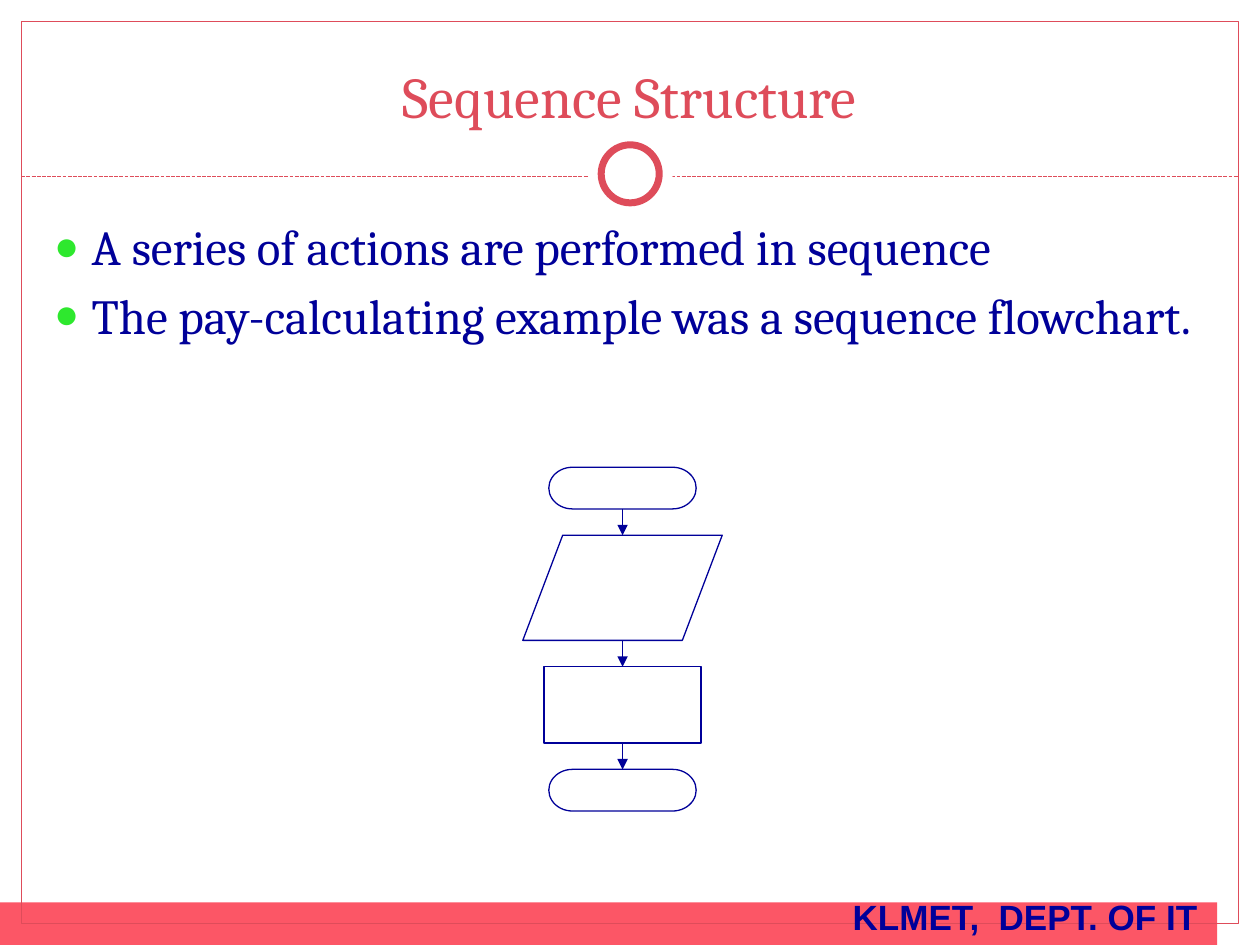
from lxml.etree import SubElement
from pptx import Presentation
from pptx.dml.color import RGBColor
from pptx.enum.dml import MSO_LINE as Dash
from pptx.enum.shapes import MSO_CONNECTOR as Link, MSO_SHAPE as Kind
from pptx.enum.text import MSO_ANCHOR as Anchor, PP_ALIGN as Align
from pptx.oxml.ns import qn
from pptx.util import Cm, Pt

ROSE, NAVY, GREEN, CORAL, WHITE = "DE4C5A", "000099", "2EE82E", "FC5666", "FFFFFF"


def paint(fmt, color):
    """Give a fill a solid colour, or none."""
    if color:
        fmt.solid()
        fmt.fore_color.rgb = RGBColor.from_string(color)
    else:
        fmt.background()


def add_box(slide, kind, left, top, width, height, fill=None, line=None, pts=0.75):
    box = slide.shapes.add_shape(kind, Cm(left), Cm(top), Cm(width), Cm(height))
    box.shadow.inherit = False
    paint(box.fill, fill)
    paint(box.line.fill, line)
    if line:
        box.line.width = Pt(pts)
    return box


def add_line(slide, x1, y1, x2, y2, color):
    line = slide.shapes.add_connector(Link.STRAIGHT, Cm(x1), Cm(y1), Cm(x2), Cm(y2))
    paint(line.line.fill, color)
    line.line.width = Pt(0.75)
    SubElement(line._element.spPr, qn("a:effectLst"))
    return line


def add_arrow(slide, x, y1, y2):
    line = add_line(slide, x, y1, x, y2, NAVY)
    SubElement(line.line._get_or_add_ln(), qn("a:tailEnd"), type="triangle")
    return line


def style(para, font, size, color, bold=False):
    para.font.name, para.font.size, para.font.bold = font, Pt(size), bold
    paint(para.font.fill, color)


def add_text(slide, left, top, width, height):
    frame = slide.shapes.add_textbox(Cm(left), Cm(top), Cm(width), Cm(height)).text_frame
    frame.word_wrap = True
    return frame


def add_bullet(para):
    props = para._p.get_or_add_pPr()
    props.set("marL", str(Cm(0.76)))
    props.set("indent", str(-Cm(0.76)))
    color = SubElement(props, qn("a:buClr"))
    SubElement(color, qn("a:srgbClr"), val=GREEN)
    SubElement(props, qn("a:buSzPct"), val="85000")
    SubElement(props, qn("a:buFont"), typeface="Arial")
    SubElement(props, qn("a:buChar"), char="●")


def add_frame(slide):
    # Footer band, border, dashed rule and ring
    add_box(slide, Kind.RECTANGLE, 0, 18.19, 24.54, 0.86, CORAL)
    add_box(slide, Kind.RECTANGLE, 0.43, 0.43, 24.54, 18.19, line=ROSE)
    rule = add_line(slide, 0.43, 3.56, 24.97, 3.56, ROSE)
    rule.line.dash_style = Dash.SQUARE_DOT
    add_box(slide, Kind.OVAL, 11.86, 2.67, 1.7, 1.7, WHITE)
    add_box(slide, Kind.OVAL, 12.12, 2.92, 1.17, 1.17, WHITE, ROSE, 4)
    # Footer label
    para = add_text(slide, 16.94, 17.93, 8.46, 1.12).paragraphs[0]
    para.text = "KLMET,  DEPT. OF IT"
    style(para, "Arial", 20, NAVY, True)


def add_title(slide, text):
    title = slide.shapes.title
    title.left, title.top, title.width, title.height = Cm(0.84), Cm(0.64), Cm(23.7), Cm(2.11)
    title.text_frame.text = text
    title.text_frame.vertical_anchor = Anchor.BOTTOM
    para = title.text_frame.paragraphs[0]
    para.alignment = Align.CENTER
    style(para, "Cambria", 33, ROSE)


def add_body(slide, items):
    frame = add_text(slide, 0.84, 4.24, 23.62, 12.7)
    frame.text = "\n".join(items)
    for para in frame.paragraphs:
        para.space_before = Pt(5.6)
        style(para, "Cambria", 28, NAVY)
        add_bullet(para)


def add_flow(slide, mid, top, gap):
    """Stack the steps on one axis, with an arrow in each gap."""
    end = (Kind.FLOWCHART_TERMINATOR, 2.97, 0.84)
    steps = [end, (Kind.FLOWCHART_DATA, 4.02, 2.12), (Kind.RECTANGLE, 3.17, 1.54), end]
    last = None
    for kind, width, height in steps:
        box = add_box(slide, kind, mid - width / 2, top, width, height, line=NAVY)
        if last:
            arrow = add_arrow(slide, mid, top - gap, top)
            # The slanted step has other joining points
            if last.auto_shape_type != Kind.FLOWCHART_DATA:
                arrow.begin_connect(last, 2)
            if kind != Kind.FLOWCHART_DATA:
                arrow.end_connect(box, 0)
        last = box
        top += height + gap


def main():
    deck = Presentation()
    deck.slide_width, deck.slide_height = Cm(25.4), Cm(19.05)
    slide = deck.slides.add_slide(deck.slide_layouts[5])
    add_frame(slide)
    add_title(slide, "Sequence Structure")
    add_body(slide, ["A series of actions are performed in sequence",
                     "The pay-calculating example was a sequence flowchart."])
    add_flow(slide, 12.55, 9.42, 0.53)
    deck.save("out.pptx")


if __name__ == "__main__":
    main()
